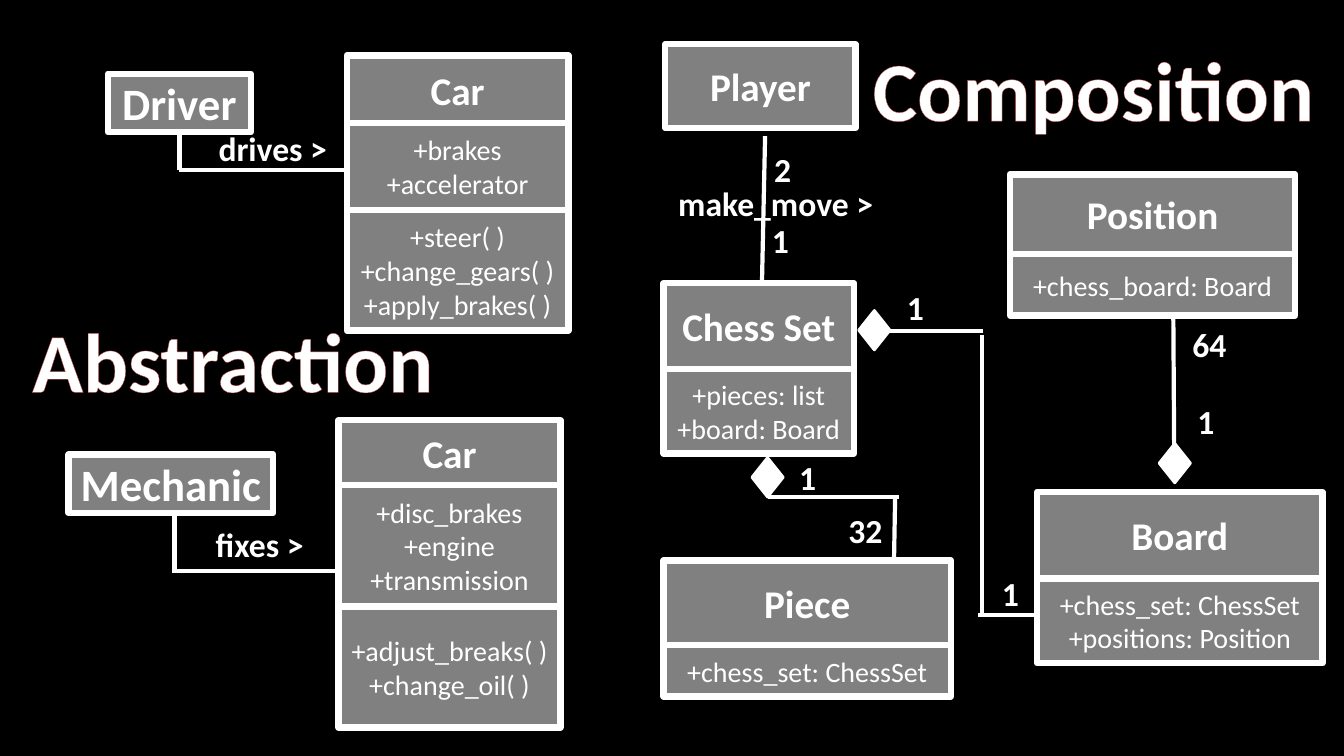
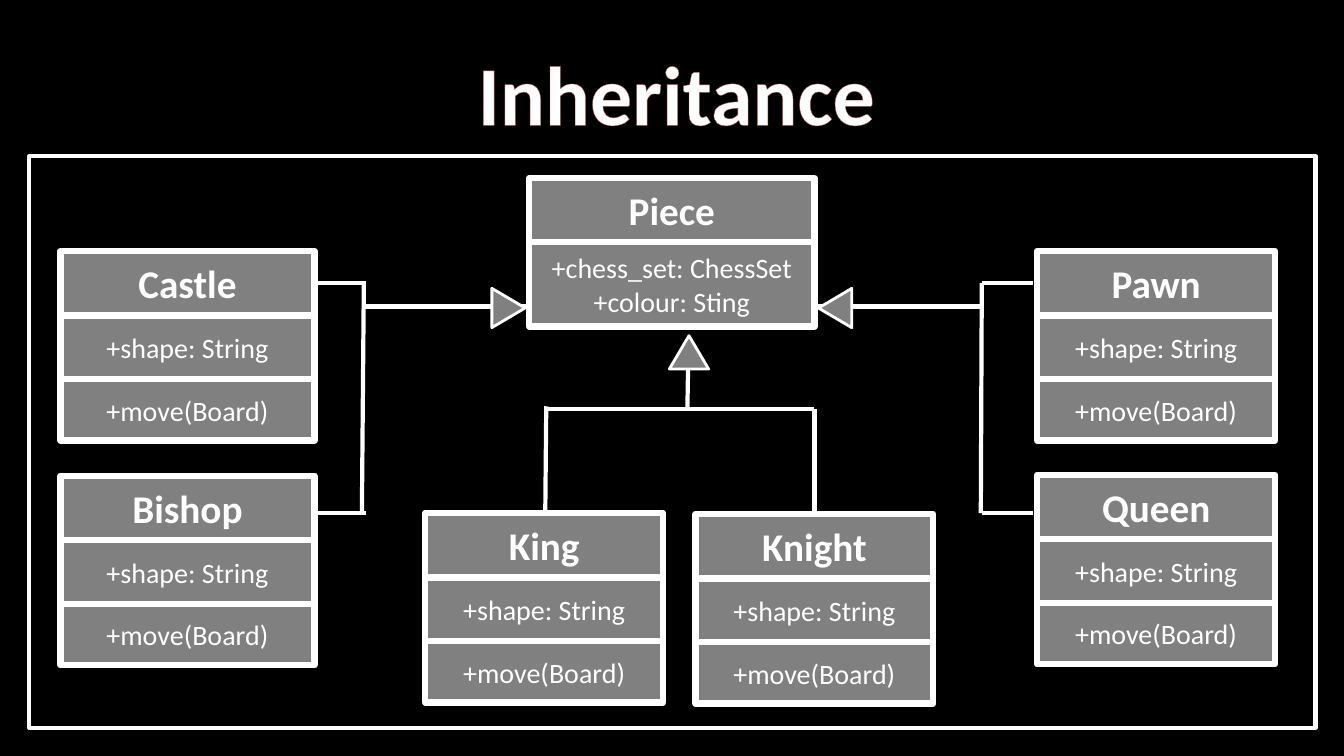
from lxml import etree
from pptx import Presentation
from pptx.dml.color import RGBColor
from pptx.enum.shapes import MSO_CONNECTOR as Link, MSO_SHAPE as Kind
from pptx.enum.text import MSO_ANCHOR as Anchor, MSO_AUTO_SIZE as Fit, PP_ALIGN as Align
from pptx.oxml.ns import qn
from pptx.util import Pt

BLACK = RGBColor(0x00, 0x00, 0x00)
WHITE = RGBColor(0xFF, 0xFF, 0xFF)
GREY = RGBColor(0x80, 0x80, 0x80)
RED = RGBColor(0xC0, 0x50, 0x4D)
FONT = "Calibri"
HEAD, BODY, NOTE, TITLE = 28, 20, 24, 60
CARD = (46.1, 45.4, 43.9)


def write(para, text, size, bold=False):
    run = para.add_run()
    run.text = text
    run.font.name = FONT
    run.font.size = Pt(size)
    run.font.bold = bold
    run.font.color.rgb = WHITE
    return run


class Area:
    def __init__(self, slide, left, top):
        self.shapes = slide.shapes
        self.left, self.top = left, top

    def spot(self, x, y):
        return Pt(self.left + x), Pt(self.top + y)

    def shape(self, kind, x, y, w, h, fill, weight):
        shape = self.shapes.add_shape(kind, *self.spot(x, y), Pt(w), Pt(h))
        shape.shadow.inherit = False
        if fill is None:
            shape.fill.background()
        else:
            shape.fill.solid()
            shape.fill.fore_color.rgb = fill
        shape.line.color.rgb = WHITE
        shape.line.width = Pt(weight)
        return shape

    def cell(self, x, y, w, h, lines, size, bold=False):
        frame = self.shape(Kind.RECTANGLE, x, y, w, h, GREY, 4.5).text_frame
        frame.vertical_anchor = Anchor.MIDDLE
        for i, text in enumerate(lines):
            para = frame.add_paragraph() if i else frame.paragraphs[0]
            para.alignment = Align.CENTER
            write(para, text, size, bold)

    def card(self, x, y, w, heights, name, *parts):
        self.cell(x, y, w, heights[0], [name], HEAD, True)
        for i, lines in enumerate(parts, 1):
            self.cell(x, y + sum(heights[:i]), w, heights[i], lines, BODY)

    def wire(self, x1, y1, x2, y2):
        line = self.shapes.add_connector(
            Link.STRAIGHT, *self.spot(x1, y1), *self.spot(x2, y2))
        line.line.color.rgb = WHITE
        line.line.width = Pt(3)
        etree.SubElement(line._element.spPr, qn("a:effectLst"))

    def label(self, text, x, y, w, h=36, size=NOTE):
        frame = self.shapes.add_textbox(*self.spot(x, y), Pt(w), Pt(h)).text_frame
        frame.word_wrap = False
        frame.auto_size = Fit.SHAPE_TO_FIT_TEXT
        return write(frame.paragraphs[0], text, size, True)

    def title(self, text, x, y, w):
        run = self.label(text, x, y, w, 80, TITLE)
        edge = etree.Element(qn("a:ln"), w=str(Pt(0.52)))
        fill = etree.SubElement(edge, qn("a:solidFill"))
        etree.SubElement(fill, qn("a:srgbClr"), val=str(RED))
        run.font._element.insert(0, edge)

    def gem(self, x, y):
        self.shape(Kind.DIAMOND, x, y, 22.3, 28.1, WHITE, 2)

    def tip(self, x, y, turn):
        tip = self.shape(Kind.ISOSCELES_TRIANGLE, x, y, 28.1, 23.8, GREY, 2)
        tip.rotation = turn


def abstract(slide, left, top):
    area = Area(slide, left, top)
    for ends in [
        (112.2, 18, 112.2, 81.7), (112.2, 81.7, 231.7, 81.7),
        (108.6, 305, 108.6, 368.2), (107.1, 368.2, 225.9, 368.2),
    ]:
        area.wire(*ends)
    area.card(231.7, 0, 158.4, (48.5, 61.7, 86.4), "Car",
              ["+brakes", "+accelerator"],
              ["+steer( )", "+change_gears( )", "+apply_brakes( )"])
    area.card(225.9, 260.6, 158.4, (46.1, 87, 86.4), "Car",
              ["+disc_brakes", "+engine", "+transmission"],
              ["+adjust_breaks( )", "+change_oil( )"])
    area.cell(61, 13, 102.2, 41.8, ["Driver"], 32, True)
    area.cell(33, 285, 146.2, 41.8, ["Mechanic"], 32, True)
    area.label("drives >", 133, 48.2, 92.9)
    area.label("fixes >", 131, 331.2, 78.5)
    area.title("Abstraction", 0, 177.1, 304.6)


def compose(slide, left, top):
    area = Area(slide, left, top)
    for ends in [
        (72.5, 74.2, 70.3, 178.6),
        (159.6, 213.2, 228, 213.2), (227.3, 216, 227.3, 416.9),
        (224.4, 416.2, 266.9, 416.2), (364.1, 201.6, 364.8, 314.7),
        (74.6, 332, 168.2, 332), (165.4, 332, 164.6, 377.3),
    ]:
        area.wire(*ends)
    area.card(1.2, 8.7, 136, (59.8,), "Player")
    area.card(0, 179.3, 136, (61.2, 60.5), "Chess Set",
              ["+pieces: list", "+board: Board"])
    area.card(0, 377.3, 205.2, (60.5, 36.7), "Piece", ["+chess_set: ChessSet"])
    area.card(266.9, 328.4, 203.8, (61.9, 60.5), "Board",
              ["+chess_set: ChessSet", "+positions: Position"])
    area.card(247.4, 101.6, 203.8, (56.9, 43.9), "Position",
              ["+chess_board: Board"])
    for x, y in [(139.4, 198.8), (354, 293.8), (63.1, 303.9)]:
        area.gem(x, y)
    for x, y in [(70.3, 130.4), (234.5, 382.4), (89.8, 299.6),
                 (166.8, 178.6), (374.2, 260)]:
        area.label("1", x, y, 26.6)
    area.label("2", 71.8, 80, 26.6)
    area.label("32", 125, 337.7, 38.9)
    area.label("64", 370.6, 205.2, 38.9)
    area.label("make_move >", 3.4, 104.4, 155.5)
    area.title("Composition", 142.3, 0, 333.4)


def inherit(slide, left, top):
    area = Area(slide, left, top)
    area.shape(Kind.RECTANGLE, 0, 85.6, 918.7, 408.2, None, 3)
    high, low, arm = 176.3, 340.5, 192.9
    for ends in [
        (560.8, 266.3, 560.8, 341.2), (368.5, 266.3, 560.8, 266.3),
        (369.2, 264.2, 368.5, 340.5), (470.8, 218.8, 470, 266.3),
        (238.9, high, 237.5, low), (237.5, arm, 357, arm),
        (680.3, high, 679.6, low), (560.8, arm, 680.3, arm),
    ]:
        area.wire(*ends)
    for y in (high, low):
        area.wire(203.6, y, 240.4, y)
        area.wire(680.3, y, 717, y)
    area.card(357, 101.4, 203.8, (45.4, 60.5), "Piece",
              ["+chess_set: ChessSet", "+colour: Sting"])
    for name, x, y, w in [
        ("Castle", 22.2, 153.3, 181.4), ("Bishop", 22.2, 313.8, 181.4),
        ("Pawn", 719.9, 153.3, 169.9), ("Queen", 719.9, 313.1, 169.9),
        ("King", 282.8, 340.5, 169.9), ("Knight", 475.8, 341.2, 169.9),
    ]:
        area.card(x, y, w, CARD, name, ["+shape: String"], ["+move(Board)"])
    for x, y, turn in [(457.1, 213.8, 0), (328.2, 182.1, 90), (561.5, 182.1, 270)]:
        area.tip(x, y, turn)
    area.title("Inheritance", 313, 0, 301.7)


def page(deck):
    slide = deck.slides.add_slide(deck.slide_layouts[6])
    fill = slide.background.fill
    fill.solid()
    fill.fore_color.rgb = BLACK
    return slide


def main():
    deck = Presentation()
    deck.slide_width, deck.slide_height = Pt(960), Pt(540)
    first = page(deck)
    abstract(first, 16, 39.6)
    compose(first, 474, 23)
    inherit(page(deck), 21, 26)
    deck.save("out.pptx")


if __name__ == "__main__":
    main()
